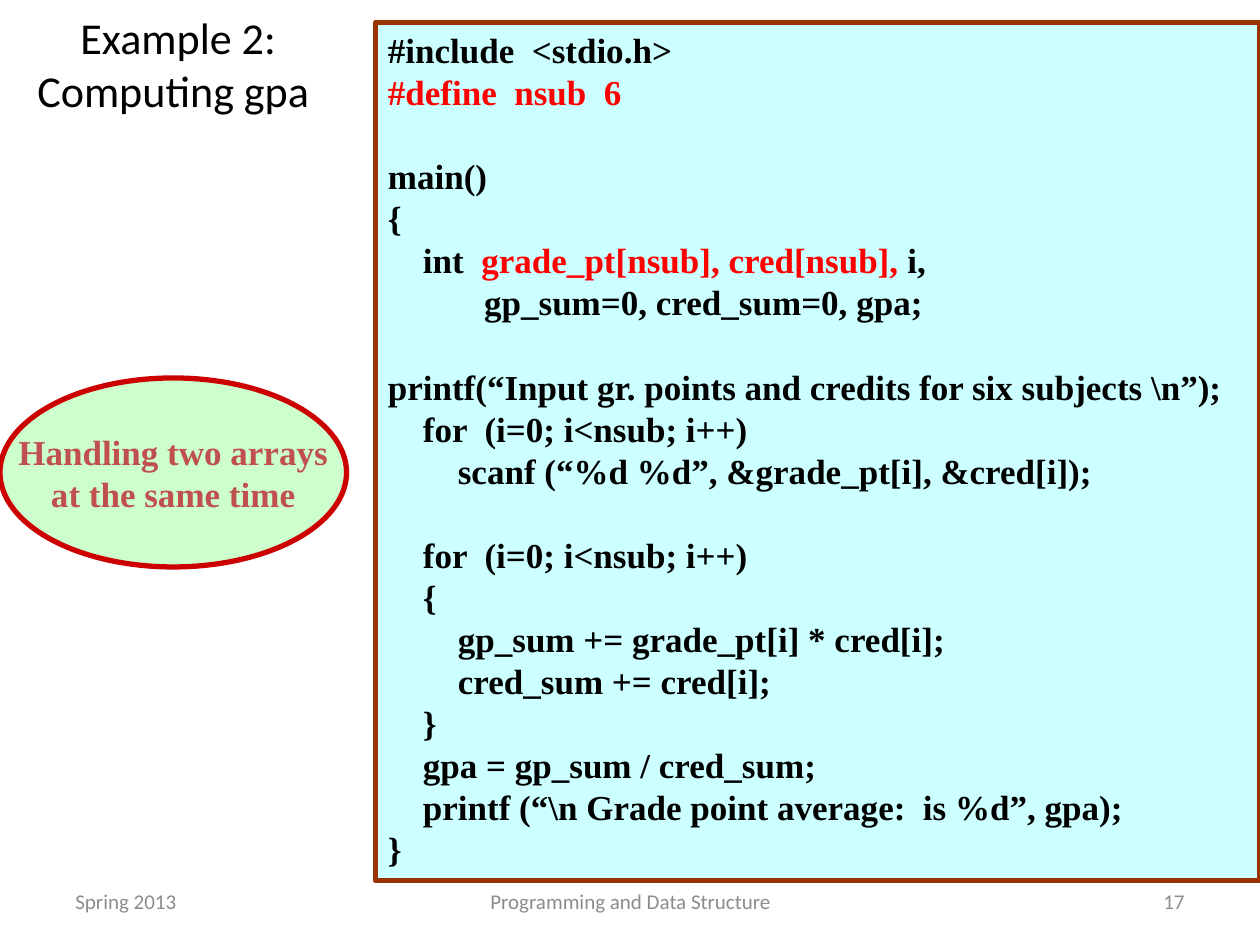
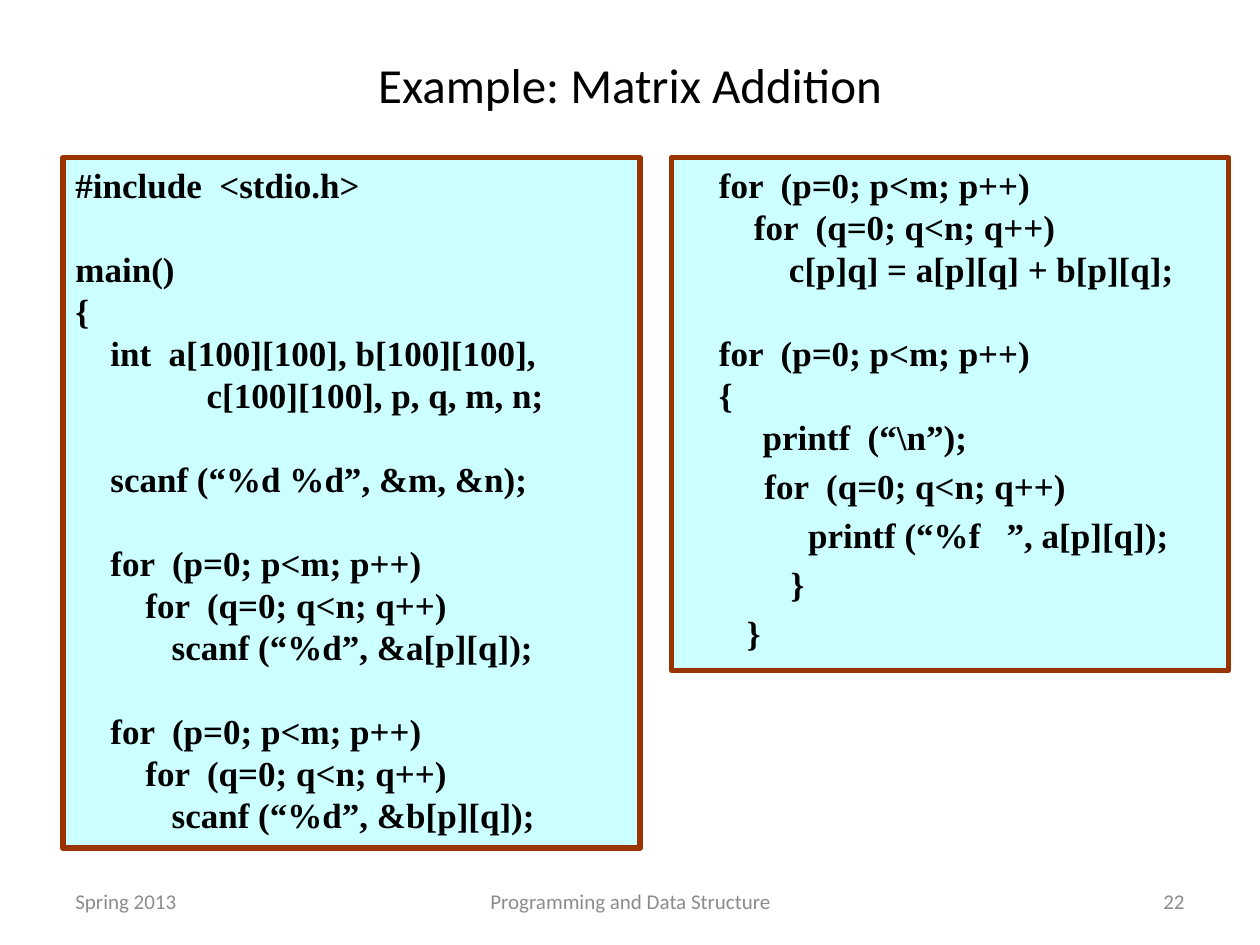
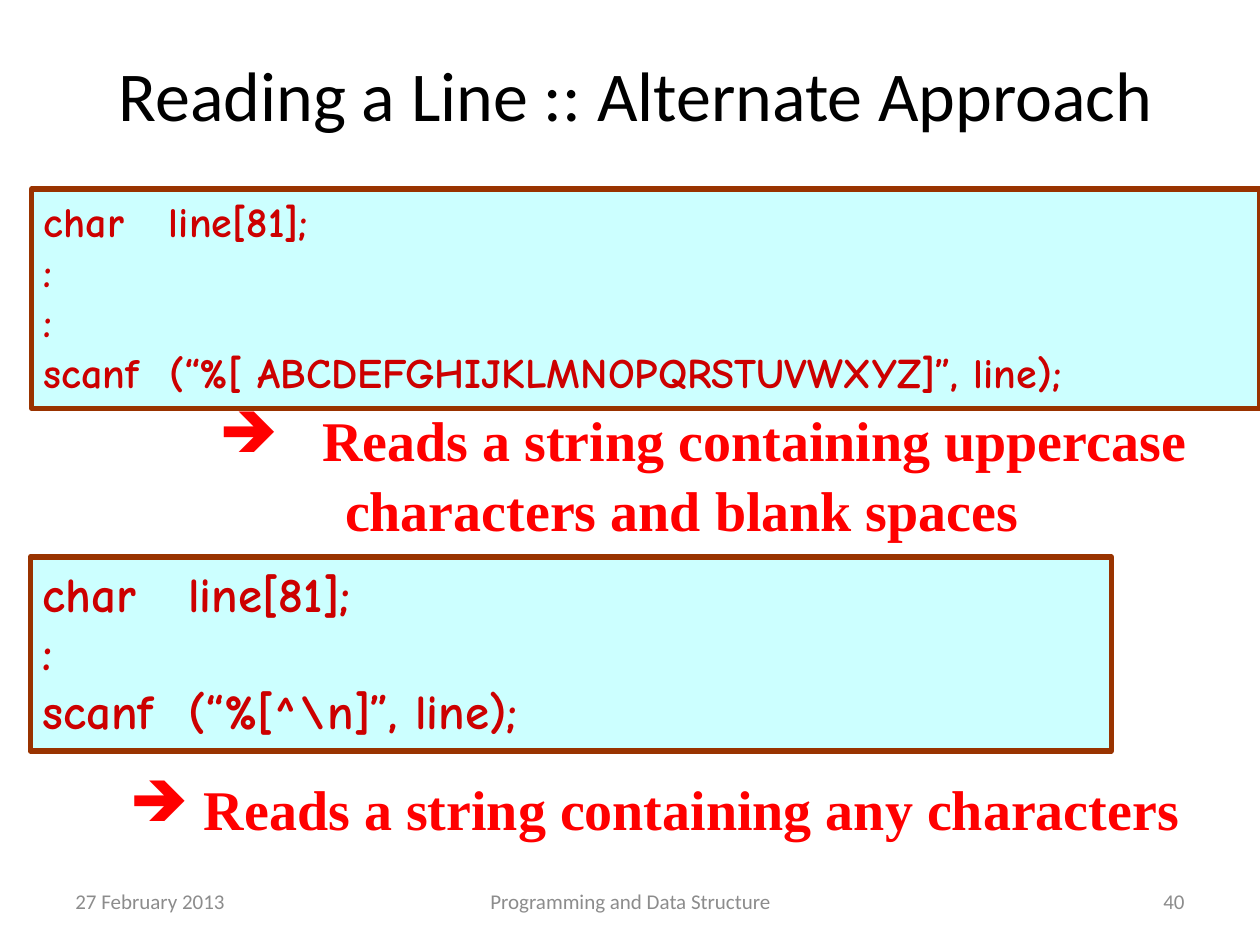
import dataclasses
import pptx
import pptx.dml.color
import pptx.enum.shapes
import pptx.enum.text
import pptx.util
from lxml import etree

Inches = pptx.util.Inches
Pt = pptx.util.Pt
RGBColor = pptx.dml.color.RGBColor
ALIGN = pptx.enum.text.PP_ALIGN
ANCHOR = pptx.enum.text.MSO_ANCHOR
SHAPE = pptx.enum.shapes.MSO_SHAPE

BLACK = RGBColor(0x00, 0x00, 0x00)
RED = RGBColor(0xFF, 0x00, 0x00)
CRIMSON = RGBColor(0xCC, 0x00, 0x00)
BRICK = RGBColor(0xC0, 0x50, 0x4D)
GREY = RGBColor(0x8C, 0x8C, 0x8C)
BROWN = RGBColor(0x99, 0x33, 0x00)
PALE_CYAN = RGBColor(0xCC, 0xFF, 0xFF)
PALE_GREEN = RGBColor(0xCC, 0xFF, 0xCC)

SANS, SERIF, COMIC = "Calibri", "Times New Roman", "Comic Neue"
CODE_SIZE = 20
COLUMN = 5 / 72
BLANK_LINE = 24
LOOSE = 4


@dataclasses.dataclass
class Style:
    """Font of a block of text."""
    font: str
    size: float
    color: RGBColor
    bold: bool = True


@dataclasses.dataclass
class Line:
    """One line of text: its runs, indent in inches and space before in points."""
    spans: object
    indent: float = 0
    before: float = 0
    bullet: str = ""


CODE = Style(SERIF, CODE_SIZE, BLACK)
REMARK = Style(SERIF, 32, RED)
FOOTER = Style(SANS, 12, GREY, False)


def code(column, spans, before=0):
    """Return a line of code that starts at the given column."""
    return Line(spans, column * COLUMN, before)


def add_span(para, text, style, color=None):
    """Add one formatted run."""
    span = para.add_run()
    span.text = text
    span.font.name = style.font
    span.font.size = Pt(style.size)
    span.font.bold = style.bold
    span.font.color.rgb = color or style.color


def set_indent(para, line):
    """Set the left margin and the bullet of a paragraph."""
    props = para._p.get_or_add_pPr()
    margin = Inches(line.indent)
    props.set("marL", str(margin))
    props.set("indent", str(-margin if line.bullet else 0))
    if line.bullet:
        tag = pptx.oxml.ns.qn("a:buChar")
        etree.SubElement(props, tag).set("char", line.bullet)


def write_lines(frame, lines, style, align=ALIGN.LEFT):
    """Fill a text frame with evenly spaced lines."""
    for number, line in enumerate(lines):
        para = frame.add_paragraph() if number else frame.paragraphs[0]
        para.alignment = align
        para.line_spacing = Pt(style.size * 1.2)
        para.space_before = Pt(line.before)
        set_indent(para, line)
        spans = [(line.spans, None)] if isinstance(line.spans, str) else line.spans
        for text, color in spans:
            add_span(para, text, style, color)


def add_text_box(page, box, anchor=ANCHOR.TOP):
    """Add a wrapping text box and return its frame."""
    frame = page.shapes.add_textbox(*map(Inches, box)).text_frame
    frame.word_wrap = True
    frame.vertical_anchor = anchor
    return frame


def add_title(page, box, size, *rows):
    """Add a centred title of one or more rows."""
    para = add_text_box(page, box, ANCHOR.MIDDLE).paragraphs[0]
    para.alignment = ALIGN.CENTER
    style = Style(SANS, size, BLACK, False)
    for number, row in enumerate(rows):
        if number:
            para.add_line_break()
        add_span(para, row, style)


def add_footer(page, date, number):
    """Add the date, course name and page number."""
    parts = [
        (0.5, 2.33, date, ALIGN.LEFT),
        (3.42, 3.17, "Programming and Data Structure", ALIGN.CENTER),
        (7.17, 2.33, str(number), ALIGN.RIGHT),
    ]
    for left, width, text, align in parts:
        frame = add_text_box(page, (left, 6.95, width, 0.4), ANCHOR.MIDDLE)
        write_lines(frame, [Line(text)], FOOTER, align)


def add_panel(page, box, kind, fill, border):
    """Add a filled, outlined shape and return its frame."""
    panel = page.shapes.add_shape(kind, *map(Inches, box))
    panel.shadow.inherit = False
    panel.fill.solid()
    panel.fill.fore_color.rgb = fill
    panel.line.color.rgb = border
    panel.line.width = Pt(3)
    return panel.text_frame


def add_code(page, box, lines, style=CODE):
    """Add a code listing in a framed panel."""
    frame = add_panel(page, box, SHAPE.RECTANGLE, PALE_CYAN, BROWN)
    frame.word_wrap = True
    frame.vertical_anchor = ANCHOR.TOP
    write_lines(frame, lines, style)


def add_callout(page, box, rows):
    """Add an oval callout with centred rows."""
    frame = add_panel(page, box, SHAPE.OVAL, PALE_GREEN, CRIMSON)
    frame.word_wrap = False
    frame.vertical_anchor = ANCHOR.MIDDLE
    style = Style(SERIF, CODE_SIZE, BRICK)
    write_lines(frame, [Line(row) for row in rows], style, ALIGN.CENTER)


def add_remark(page, box, lines):
    """Add large red remarks under a listing."""
    write_lines(add_text_box(page, box), lines, REMARK)


def build_gpa(page):
    """Build the grade point average example."""
    add_title(page, (0, 0, 2.83, 1), 25.2, "Example 2:", "Computing gpa ")
    add_footer(page, "Spring 2013", 17)
    add_code(page, (2.98, 0.18, 7.02, 6.81), [
        code(0, "#include  <stdio.h>"),
        code(0, [("#define  nsub  6", RED)]),
        code(0, "main()", BLANK_LINE),
        code(0, "{"),
        code(4, [("int  ", None), ("grade_pt[nsub], cred[nsub],", RED), (" i,", None)]),
        code(11, "gp_sum=0, cred_sum=0, gpa;"),
        code(0, "printf(“Input gr. points and credits for six subjects \\n”);", BLANK_LINE),
        code(4, "for  (i=0; i<nsub; i++)"),
        code(8, "scanf (“%d %d”, &grade_pt[i], &cred[i]);"),
        code(4, "for  (i=0; i<nsub; i++)", BLANK_LINE),
        code(4, "{"),
        code(8, "gp_sum += grade_pt[i] * cred[i];"),
        code(8, "cred_sum += cred[i];"),
        code(4, "}"),
        code(4, "gpa = gp_sum / cred_sum;"),
        code(4, "printf (“\\n Grade point average:  is %d”, gpa);"),
        code(0, "}"),
    ])
    add_callout(page, (0, 3, 2.75, 1.5), ["Handling two arrays", "at the same time"])


def read_matrix(name):
    """Return the loop that reads one matrix."""
    return [
        code(4, "for  (p=0; p<m; p++)", BLANK_LINE),
        code(8, "for  (q=0; q<n; q++)"),
        code(11, f"scanf (“%d”, &{name}[p][q]);"),
    ]


def build_matrix(page):
    """Build the matrix addition example."""
    add_title(page, (0.75, 0.33, 8.5, 0.67), 28, "Example: Matrix Addition")
    add_footer(page, "Spring 2013", 22)
    add_code(page, (0.5, 1.25, 4.58, 5.48), [
        code(0, "#include  <stdio.h>"),
        code(0, "main()", BLANK_LINE),
        code(0, "{"),
        code(4, "int  a[100][100], b[100][100],"),
        code(15, "c[100][100], p, q, m, n;"),
        code(4, "scanf (“%d %d”, &m, &n);", BLANK_LINE),
        *read_matrix("a"),
        *read_matrix("b"),
    ])
    add_code(page, (5.33, 1.25, 4.42, 4.07), [
        code(4, "for  (p=0; p<m; p++)"),
        code(8, "for  (q=0; q<n; q++)"),
        code(12, "c[p]q] = a[p][q] + b[p][q];"),
        code(4, "for  (p=0; p<m; p++)", BLANK_LINE),
        code(4, "{"),
        code(9, "printf  (“\\n”);"),
        code(9.2, "for  (q=0; q<n; q++)", LOOSE),
        code(14.2, "printf (“%f   ”, a[p][q]);", LOOSE),
        code(12.2, "}", LOOSE),
        code(7.2, "}", LOOSE),
    ])


def build_reading(page):
    """Build the page on reading a line with scanf."""
    add_footer(page, "27 February 2013", 40)
    add_title(page, (0.3, 0.33, 9.49, 0.83), 40, "Reading a Line :: Alternate Approach")
    listings = [
        ((0.25, 1.5, 9.75, 1.74), 24, 2, "scanf  (“%[ ABCDEFGHIJKLMNOPQRSTUVWXYZ]”, line);"),
        ((0.24, 4.42, 8.58, 1.54), 28, 1, "scanf  (“%[^\\n]”, line);"),
    ]
    for box, size, dots, call in listings:
        rows = ["char   line[81];", *[":"] * dots, call]
        add_code(page, box, [Line(row) for row in rows], Style(COMIC, size, CRIMSON))
    add_remark(page, (1.64, 3.17, 8.36, 1.19), [
        Line("Reads a string containing uppercase", 0.82, 1.6, "➔"),
        Line("characters and blank spaces", 1, 1.6),
    ])
    add_remark(page, (0.93, 6.1, 8.78, 0.63), [
        Line("Reads a string containing any characters", 0.59, 1.6, "➔"),
    ])


def main():
    """Build and save the deck."""
    deck = pptx.Presentation()
    deck.slide_width, deck.slide_height = Inches(10), Inches(7.5)
    for build in (build_gpa, build_matrix, build_reading):
        build(deck.slides.add_slide(deck.slide_layouts[6]))
    deck.save("out.pptx")


if __name__ == "__main__":
    main()
